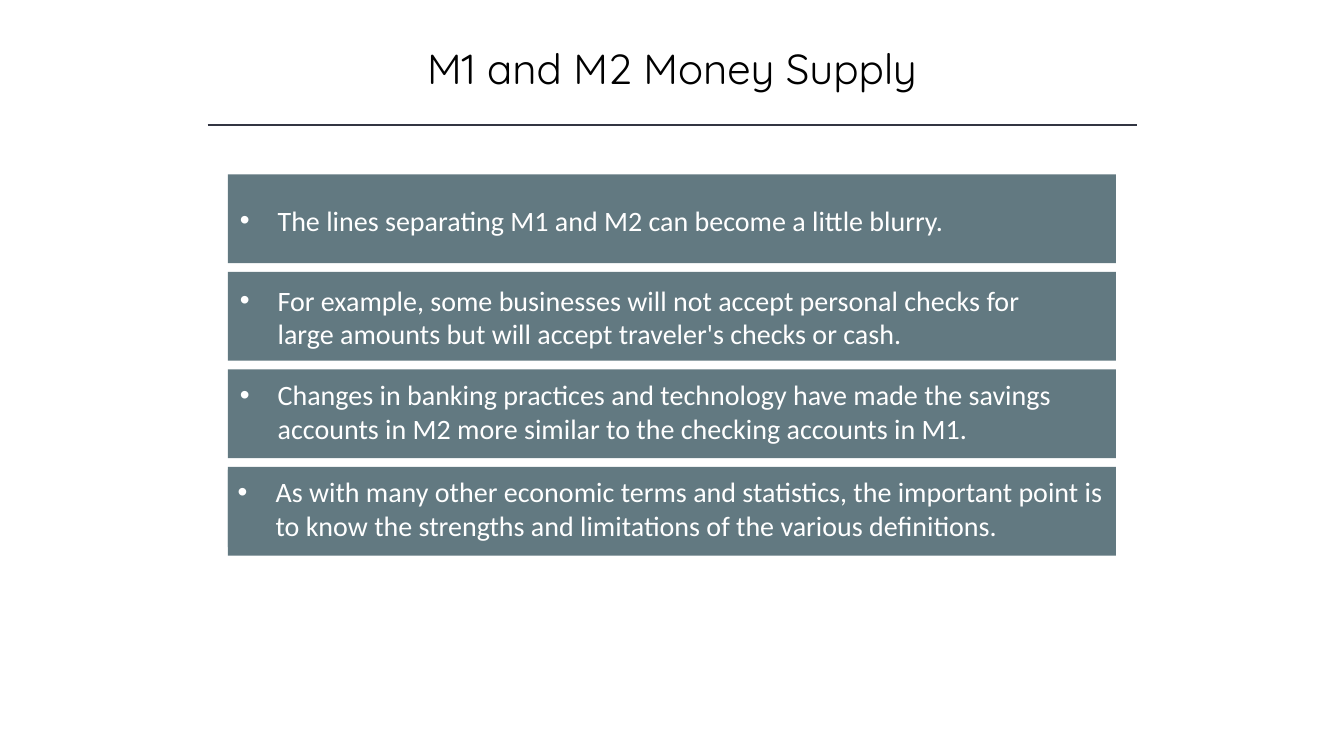
from lxml import etree
from pptx import Presentation
from pptx.dml.color import RGBColor
from pptx.enum.shapes import MSO_CONNECTOR, MSO_SHAPE
from pptx.enum.text import MSO_ANCHOR, MSO_AUTO_SIZE, PP_ALIGN
from pptx.oxml.ns import qn
from pptx.util import Pt

RECTANGLE = MSO_SHAPE.RECTANGLE
STRAIGHT = MSO_CONNECTOR.STRAIGHT
TOP = MSO_ANCHOR.TOP
GROW = MSO_AUTO_SIZE.SHAPE_TO_FIT_TEXT
LEFT, CENTER = PP_ALIGN.LEFT, PP_ALIGN.CENTER

TITLE = "M1 and M2 Money Supply"
# Each point: wording, then left, top, width and height of its text area
POINTS = [
    ("The lines separating M1 and M2 can become a little blurry.",
     (164.2, 141.7, 632.2, 31.5)),
    ("For example, some businesses will not accept personal checks for "
     "large amounts but will accept traveler's checks or cash.",
     (164.2, 198.7, 612, 55.4)),
    ("Changes in banking practices and technology have made the savings "
     "accounts in M2 more similar to the checking accounts in M1.",
     (164.2, 266.2, 632.2, 55.4)),
    ("As with many other economic terms and statistics, the important point "
     "is to know the strengths and limitations of the various definitions.",
     (162.7, 335.5, 634.3, 55.4)),
]

THEME = {
    "band": RGBColor(0x62, 0x79, 0x81),
    "rule": RGBColor(0x32, 0x35, 0x42),
    "title": {"name": "Quicksand", "size": Pt(30), "color": RGBColor(0, 0, 0)},
    "point": {"name": "Calibri", "size": Pt(20),
              "color": RGBColor(0xFF, 0xFF, 0xFF)},
}

SLIDE_SIZE = (960, 540)
TITLE_BOX = (120, 26.6, 720, 79.9)
RULE_LEFT, RULE_RIGHT, RULE_Y = 148.3, 812.2, 89.3
BAND_LEFT, BAND_TOP, BAND_WIDTH, BAND_HEIGHT = 162.7, 124.6, 634.3, 63.4
BAND_PITCH = 69.6
BULLET_INDENT = 27


def points(lengths):
    return [Pt(length) for length in lengths]


def add_band(shapes, box):
    band = shapes.add_shape(RECTANGLE, *points(box))
    band.shadow.inherit = False
    band.fill.solid()
    band.fill.fore_color.rgb = THEME["band"]
    band.line.fill.background()
    return band


def write(shape, text, style, alignment):
    frame = shape.text_frame
    layout = {"word_wrap": True, "auto_size": GROW, "vertical_anchor": TOP}
    for attribute, value in layout.items():
        setattr(frame, attribute, value)
    paragraph = frame.paragraphs[0]
    paragraph.alignment = alignment
    run = paragraph.add_run()
    run.text = text
    run.font.name = style["name"]
    run.font.size = style["size"]
    run.font.color.rgb = style["color"]
    return paragraph


def add_bullet(paragraph):
    properties = paragraph._p.get_or_add_pPr()
    properties.set("marL", str(Pt(BULLET_INDENT)))
    properties.set("indent", str(-Pt(BULLET_INDENT)))
    etree.SubElement(properties, qn("a:buFont")).set("typeface", "Arial")
    etree.SubElement(properties, qn("a:buChar")).set("char", "•")


def add_title_rule(slide):
    rule = slide.shapes.add_connector(
        STRAIGHT, *points((RULE_LEFT, RULE_Y, RULE_RIGHT, RULE_Y)))
    rule.line.color.rgb = THEME["rule"]
    rule.line.width = Pt(1)
    etree.SubElement(rule._element.spPr, qn("a:effectLst"))


def main():
    presentation = Presentation()
    presentation.slide_width, presentation.slide_height = points(SLIDE_SIZE)
    slide = presentation.slides.add_slide(presentation.slide_layouts[6])

    add_title_rule(slide)
    for row, (wording, text_box) in enumerate(POINTS):
        group = slide.shapes.add_group_shape()
        band_top = BAND_TOP + row * BAND_PITCH
        add_band(group.shapes, (BAND_LEFT, band_top, BAND_WIDTH, BAND_HEIGHT))
        text_area = add_band(group.shapes, text_box)
        add_bullet(write(text_area, wording, THEME["point"], LEFT))

    title = slide.shapes.add_textbox(*points(TITLE_BOX))
    write(title, TITLE, THEME["title"], CENTER)
    presentation.save("out.pptx")


if __name__ == "__main__":
    main()
